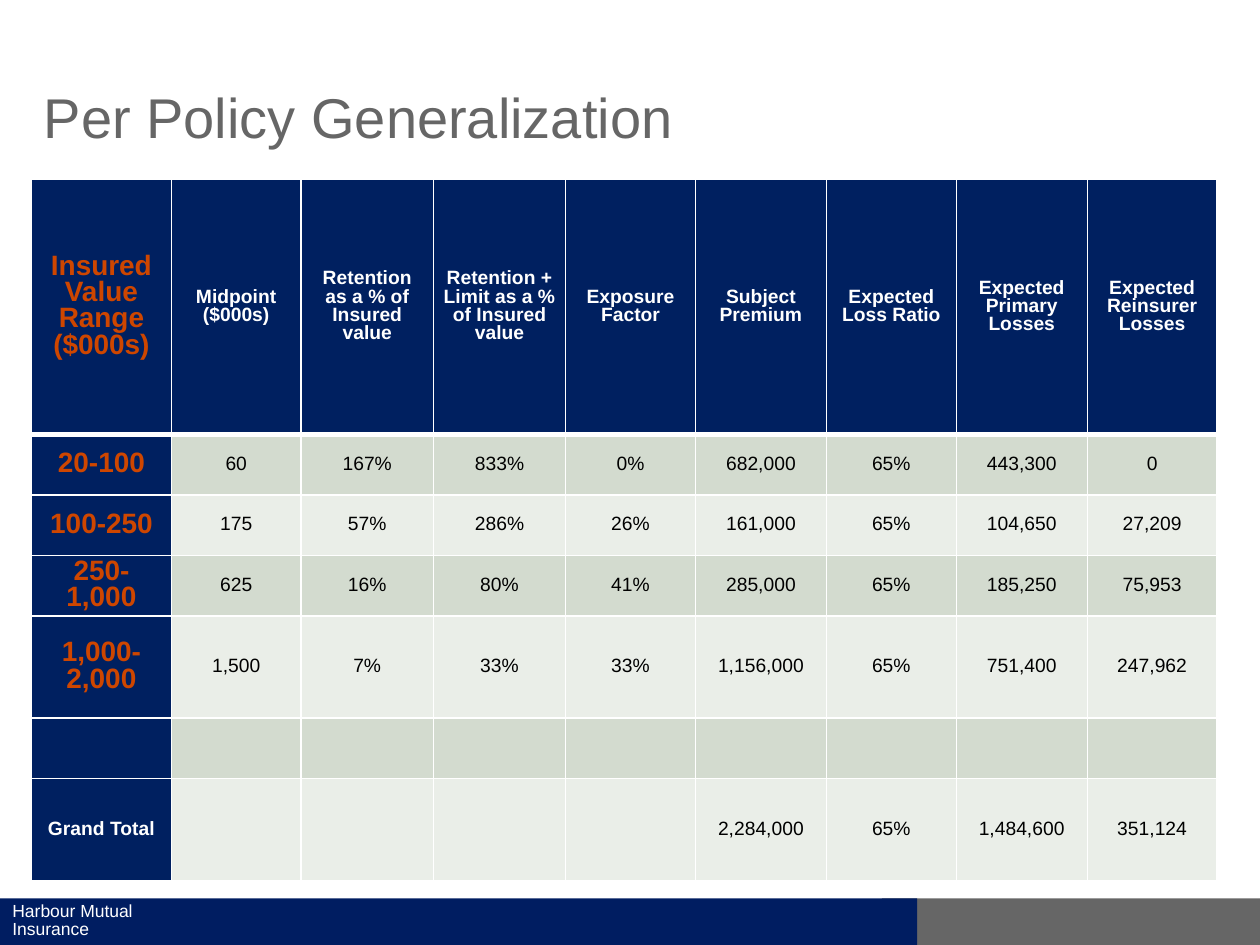
"""Build the per policy exposure rating slide."""
from dataclasses import dataclass

from lxml import etree
from pptx import Presentation
from pptx.dml.color import RGBColor
from pptx.enum.shapes import MSO_SHAPE
from pptx.enum.text import MSO_ANCHOR, PP_ALIGN
from pptx.oxml.ns import qn
from pptx.util import Inches, Pt

RECTANGLE = MSO_SHAPE.RECTANGLE
MIDDLE = MSO_ANCHOR.MIDDLE
LEFT, CENTER = PP_ALIGN.LEFT, PP_ALIGN.CENTER
SLIDE_WIDTH, SLIDE_HEIGHT = Inches(10), Inches(7.5)
FONT = "Arial"
WHITE, BLACK, GRAY, ORANGE = "FFFFFF", "000000", "666666", "CE4600"
NAVY, FOOTER_NAVY = "002060", "001D61"
BANDS = ("D3DBCF", "EAEEE8")
COLUMN_SHARES = (11.1, 10.3, 10.5, 10.5, 10.3, 10.4, 10.3, 10.4, 10.3)
ROW_SHARES = (27.07, 6.4, 6.4, 6.4, 10.8, 6.4, 10.8)
ROWS = (
    ("Insured Value Range ($000s)", "Midpoint ($000s)", "Retention as a % of Insured value",
     "Retention + Limit as a % of Insured value", "Exposure Factor", "Subject Premium",
     "Expected Loss Ratio", "Expected Primary Losses", "Expected Reinsurer Losses"),
    ("20-100", "60", "167%", "833%", "0%", "682,000", "65%", "443,300", "0"),
    ("100-250", "175", "57%", "286%", "26%", "161,000", "65%", "104,650", "27,209"),
    ("250-1,000", "625", "16%", "80%", "41%", "285,000", "65%", "185,250", "75,953"),
    ("1,000-2,000", "1,500", "7%", "33%", "33%", "1,156,000", "65%", "751,400", "247,962"),
    ("",) * 9,
    ("Grand Total", "", "", "", "", "2,284,000", "65%", "1,484,600", "351,124"),
)


@dataclass(frozen=True)
class Box:
    """Hold a position and size in percent of the slide."""

    left: float
    top: float
    width: float
    height: float

    def lengths(self) -> tuple:
        """Return left, top, width and height as slide lengths."""
        return (across(self.left), down(self.top), across(self.width), down(self.height))


@dataclass(frozen=True)
class Bar:
    """Describe one footer bar."""

    box: Box
    color: str


FOOTER_BARS = (
    Bar(Box(70, 95.07, 30, 4.93), GRAY),
    Bar(Box(0, 95.07, 72.8, 4.93), FOOTER_NAVY),
)


def across(share: float) -> int:
    """Turn a percentage of the slide width into a length."""
    return round(SLIDE_WIDTH * share / 100)


def down(share: float) -> int:
    """Turn a percentage of the slide height into a length."""
    return round(SLIDE_HEIGHT * share / 100)


def paint(fill, color: str) -> None:
    """Make a fill solid in a hex colour."""
    fill.solid()
    fill.fore_color.rgb = RGBColor.from_string(color)


def write(frame, text: str, *, size: float, color: str, bold: bool = False,
          align=LEFT, spacing: float = 1.0) -> None:
    """Write one formatted paragraph into a text frame."""
    paragraph = frame.paragraphs[0]
    paragraph.alignment = align
    paragraph.line_spacing = spacing
    run = paragraph.add_run()
    run.text = text
    run.font.name = FONT
    run.font.size = Pt(size)
    run.font.bold = bold
    paint(run.font.fill, color)


def add_bar(slide, bar: Bar) -> None:
    """Draw a plain footer bar."""
    shape = slide.shapes.add_shape(RECTANGLE, *bar.box.lengths())
    shape.shadow.inherit = False
    shape.line.fill.background()
    paint(shape.fill, bar.color)


def add_text(slide, box: Box, text: str, *, inset: float = 0.05, **style) -> None:
    """Add a wrapped text box anchored in the middle."""
    frame = slide.shapes.add_textbox(*box.lengths()).text_frame
    frame.word_wrap = True
    frame.vertical_anchor = MIDDLE
    frame.margin_top = frame.margin_bottom = Inches(inset)
    write(frame, text, **style)


def set_borders(cell, top: float, bottom: float) -> None:
    """Give a cell white borders of the stated point widths."""
    properties = cell._tc.get_or_add_tcPr()
    widths = {"a:lnL": 1, "a:lnR": 1, "a:lnT": top, "a:lnB": bottom}
    for index, (tag, width) in enumerate(widths.items()):
        line = etree.Element(qn(tag), w=str(Pt(width)))
        solid = etree.SubElement(line, qn("a:solidFill"))
        etree.SubElement(solid, qn("a:srgbClr"), val=WHITE)
        properties.insert(index, line)


def cell_style(row: int, column: int) -> dict:
    """Choose the text format for a table position."""
    if column == 0 and row < len(ROWS) - 1:
        return {"size": 16, "color": ORANGE, "bold": True}
    if row == 0 or column == 0:
        return {"size": 11, "color": WHITE, "bold": True}
    return {"size": 11, "color": BLACK}


def fill_cell(cell, row: int, column: int, text: str) -> None:
    """Format and fill one table cell."""
    paint(cell.fill, NAVY if row == 0 or column == 0 else BANDS[(row - 1) % 2])
    set_borders(cell, top=3 if row == 1 else 1, bottom=3 if row == 0 else 1)
    cell.vertical_anchor = MIDDLE
    cell.margin_left = cell.margin_right = Inches(0.07)
    cell.margin_top = cell.margin_bottom = 0
    if text:
        write(cell.text_frame, text, align=CENTER, spacing=0.85, **cell_style(row, column))


def add_policy_table(slide) -> None:
    """Add the table of insured value ranges."""
    box = Box(2.5, 18.93, sum(COLUMN_SHARES), sum(ROW_SHARES))
    table = slide.shapes.add_table(len(ROWS), len(COLUMN_SHARES), *box.lengths()).table
    for column, share in zip(table.columns, COLUMN_SHARES):
        column.width = across(share)
    for row, share in zip(table.rows, ROW_SHARES):
        row.height = down(share)
    for row, texts in enumerate(ROWS):
        for column, text in enumerate(texts):
            fill_cell(table.cell(row, column), row, column, text)


def main() -> None:
    """Build and save the presentation."""
    presentation = Presentation()
    presentation.slide_width, presentation.slide_height = SLIDE_WIDTH, SLIDE_HEIGHT
    slide = presentation.slides.add_slide(presentation.slide_layouts[6])
    paint(slide.background.fill, WHITE)
    for bar in FOOTER_BARS:
        add_bar(slide, bar)
    add_text(slide, Box(0, 95.07, 17.5, 4.8), "Harbour Mutual Insurance",
             inset=0, size=10, color=WHITE, spacing=0.85)
    add_text(slide, Box(2.5, 4, 95, 16.67), "Per Policy Generalization", size=32, color=GRAY)
    add_policy_table(slide)
    presentation.save("out.pptx")


if __name__ == "__main__":
    main()
